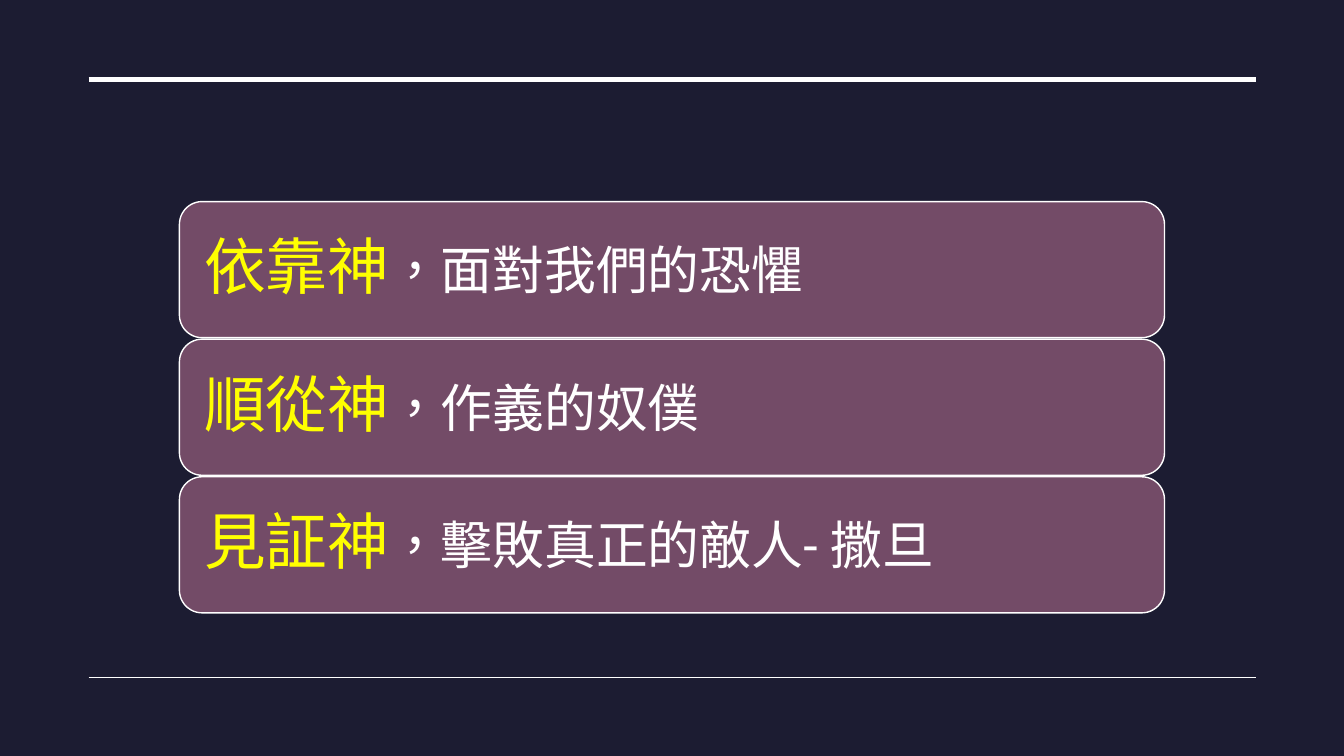
from lxml.etree import SubElement
from pptx import Presentation
from pptx.dml.color import RGBColor
from pptx.enum.lang import MSO_LANGUAGE_ID
from pptx.enum.shapes import MSO_CONNECTOR, MSO_SHAPE
from pptx.enum.text import MSO_ANCHOR, PP_ALIGN
from pptx.oxml.ns import qn
from pptx.util import Inches, Pt

POINTS = [
    ("依靠神", "，面對我們的恐懼"),
    ("順從神", "，作義的奴僕"),
    ("見証神", "，擊敗真正的敵人- 撒旦"),
]
RULES = [(0.79, 3.5), (6.72, 1)]
RULE_LEFT, RULE_RIGHT = 0.88, 12.46
CARD_LEFT, CARD_TOP, CARD_WIDTH, CARD_HEIGHT = 1.78, 2, 9.77, 1.35
CARD_STEP = 1.365
INSET = 0.18
NAVY, PLUM, YELLOW, WHITE = "1C1C32", "734B67", "FFFF00", "FFFFFF"


def paint(fill, color):
    fill.solid()
    fill.fore_color.rgb = RGBColor.from_string(color)


def add_rule(s, y, weight):
    line = s.shapes.add_connector(
        MSO_CONNECTOR.STRAIGHT,
        Inches(RULE_LEFT), Inches(y), Inches(RULE_RIGHT), Inches(y),
    )
    paint(line.line.fill, WHITE)
    line.line.width = Pt(weight)
    SubElement(line._element.spPr, qn("a:effectLst"))


def add_run(p, text, size, font, color):
    r = p.add_run()
    r.text = text
    r.font.size = Pt(size)
    r.font.name = font
    r.font.language_id = MSO_LANGUAGE_ID.TRADITIONAL_CHINESE
    paint(r.font.fill, color)


def add_card(s, top, key, rest):
    sp = s.shapes.add_shape(
        MSO_SHAPE.ROUNDED_RECTANGLE,
        Inches(CARD_LEFT), Inches(top), Inches(CARD_WIDTH), Inches(CARD_HEIGHT),
    )
    sp.shadow.inherit = False
    paint(sp.fill, PLUM)
    paint(sp.line.fill, WHITE)
    sp.line.width = Pt(1)
    tf = sp.text_frame
    tf.word_wrap = True
    tf.vertical_anchor = MSO_ANCHOR.MIDDLE
    tf.margin_left = tf.margin_right = Inches(INSET)
    tf.margin_top = tf.margin_bottom = Inches(INSET)
    p = tf.paragraphs[0]
    p.alignment = PP_ALIGN.LEFT
    p.line_spacing = 0.9
    add_run(p, key, 44, "Arial", YELLOW)
    add_run(p, rest, 37, "Roboto", WHITE)


def main():
    prs = Presentation()
    prs.slide_width, prs.slide_height = Inches(13.33), Inches(7.5)
    s = prs.slides.add_slide(prs.slide_layouts[6])
    paint(s.background.fill, NAVY)
    for y, weight in RULES:
        add_rule(s, y, weight)
    for i, (key, rest) in enumerate(POINTS):
        add_card(s, CARD_TOP + i * CARD_STEP, key, rest)
    prs.save("out.pptx")


if __name__ == "__main__":
    main()
